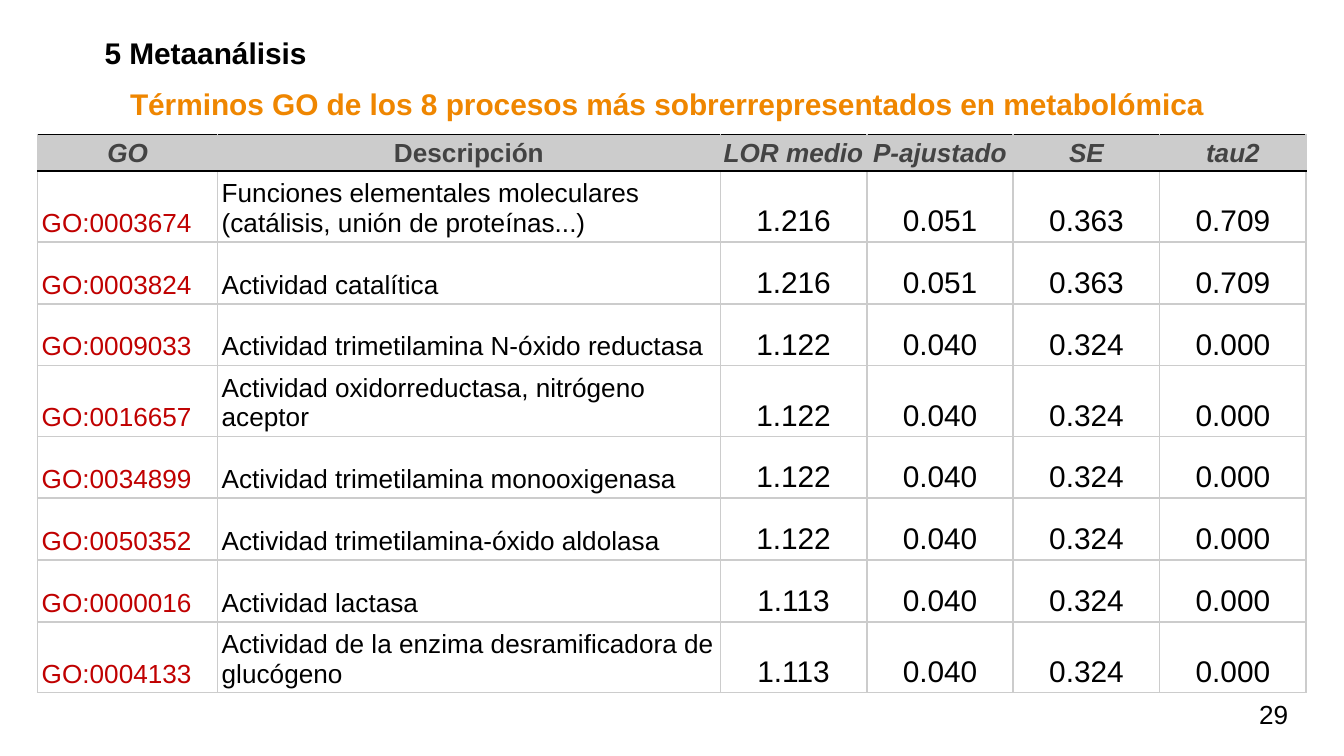
import pptx
import pptx.util
import pptx.dml.color
import pptx.enum.text
import pptx.oxml
import pptx.oxml.ns

Inches, Pt = pptx.util.Inches, pptx.util.Pt
ALIGN, ANCHOR = pptx.enum.text.PP_ALIGN, pptx.enum.text.MSO_ANCHOR

# Content
SECTION = "5 Metaanálisis"
TITLE = "Términos GO de los 8 procesos más sobrerrepresentados en metabolómica"
PAGE = "29"
HEADER = ["GO", "Descripción", "LOR medio", "P-ajustado", "SE", "tau2"]
ROWS = [
    ("GO:0003674", "Funciones elementales moleculares (catálisis, unión de proteínas...)",
     "1.216", "0.051", "0.363", "0.709"),
    ("GO:0003824", "Actividad catalítica", "1.216", "0.051", "0.363", "0.709"),
    ("GO:0009033", "Actividad trimetilamina N-óxido reductasa",
     "1.122", "0.040", "0.324", "0.000"),
    ("GO:0016657", "Actividad oxidorreductasa, nitrógeno aceptor",
     "1.122", "0.040", "0.324", "0.000"),
    ("GO:0034899", "Actividad trimetilamina monooxigenasa",
     "1.122", "0.040", "0.324", "0.000"),
    ("GO:0050352", "Actividad trimetilamina-óxido aldolasa",
     "1.122", "0.040", "0.324", "0.000"),
    ("GO:0000016", "Actividad lactasa", "1.113", "0.040", "0.324", "0.000"),
    ("GO:0004133", "Actividad de la enzima desramificadora de glucógeno",
     "1.113", "0.040", "0.324", "0.000"),
]

# Layout and formats
SLIDE_WIDTH = 10
SLIDE_HEIGHT = SLIDE_WIDTH * 9 / 16
LEFT, TOP = 0.28, 1
COL_WIDTHS = [1.34, 3.74] + [1.09] * 4
ROW_HEIGHTS = [0.24] + [0.46] * len(ROWS)
BLACK, GREY = "000000", "CCCCCC"
HEAD = dict(size=14, color="434343", bold=True, align=ALIGN.CENTER)
GO_ID = dict(size=14, color="C00000")
DESCRIPTION = dict(size=14)
NUMBER = dict(size=16, align=ALIGN.CENTER)
BODY = [GO_ID, DESCRIPTION] + [NUMBER] * 4


def rgb(color):
    return pptx.dml.color.RGBColor.from_string(color)


def set_margins(target, margin):
    for side in ("left", "right", "top", "bottom"):
        setattr(target, "margin_" + side, Inches(margin))


def write(tf, text, size, color=BLACK, bold=False, italic=False, align=ALIGN.LEFT):
    p = tf.paragraphs[0]
    p.alignment = align
    r = p.add_run()
    r.text = text
    font = {"name": "Arial", "size": Pt(size), "bold": bold, "italic": italic}
    for name, value in font.items():
        setattr(r.font, name, value)
    r.font.color.rgb = rgb(color)
    return p


def add_text(s, box, text, margin=None, anchor=ANCHOR.TOP, **style):
    tf = s.shapes.add_textbox(*map(Inches, box)).text_frame
    tf.word_wrap = True
    tf.vertical_anchor = anchor
    if margin is not None:
        set_margins(tf, margin)
    return write(tf, text, **style)


def set_borders(cell, top, bottom):
    tcPr = cell._tc.get_or_add_tcPr()
    sides = {"L": GREY, "R": GREY, "T": top, "B": bottom}
    for i, (side, color) in enumerate(sides.items()):
        tcPr.insert(i, pptx.oxml.parse_xml(
            f'<a:ln{side} {pptx.oxml.ns.nsdecls("a")} w="{Pt(1)}"><a:solidFill>'
            f'<a:srgbClr val="{color}"/></a:solidFill></a:ln{side}>'))


def add_go_table(s):
    table = s.shapes.add_table(
        len(ROW_HEIGHTS), len(COL_WIDTHS), Inches(LEFT), Inches(TOP),
        Inches(sum(COL_WIDTHS)), Inches(sum(ROW_HEIGHTS))).table
    table.first_row = table.horz_banding = False
    for column, width in zip(table.columns, COL_WIDTHS):
        column.width = Inches(width)
    for row, height in zip(table.rows, ROW_HEIGHTS):
        row.height = Inches(height)

    for i, values in enumerate([HEADER] + ROWS):
        is_head = i == 0
        for j, text in enumerate(values):
            cell = table.cell(i, j)
            cell.vertical_anchor = ANCHOR.BOTTOM
            set_margins(cell, 0.02 if is_head else 0.03)
            if is_head:
                cell.fill.solid()
                cell.fill.fore_color.rgb = rgb(GREY)
                style = dict(HEAD, italic=text != "Descripción")
            else:
                cell.fill.background()
                style = BODY[j]
            set_borders(cell, BLACK if i < 2 else GREY, BLACK if is_head else GREY)
            write(cell.text_frame, text, **style)


def main():
    prs = pptx.Presentation()
    prs.slide_width, prs.slide_height = Inches(SLIDE_WIDTH), Inches(SLIDE_HEIGHT)
    s = prs.slides.add_slide(prs.slide_layouts[6])

    # Title
    add_text(s, (0.2, 0.59, 9.53, 0.37), TITLE, size=16, color="EF8600",
             bold=True, align=ALIGN.CENTER)
    # Table of GO terms
    add_go_table(s)
    # Section heading, indented
    p = add_text(s, (LEFT, 0.21, 6.43, 0.37), SECTION, size=16, bold=True,
                 align=ALIGN.JUSTIFY)
    p.space_before = Pt(10)
    p._p.get_or_add_pPr().set("marL", str(Inches(0.4)))
    # Page number
    add_text(s, (9.27, 5.1, 0.6, 0.43), PAGE, margin=0.1,
             anchor=ANCHOR.MIDDLE, size=14)

    prs.save("out.pptx")


if __name__ == "__main__":
    main()
